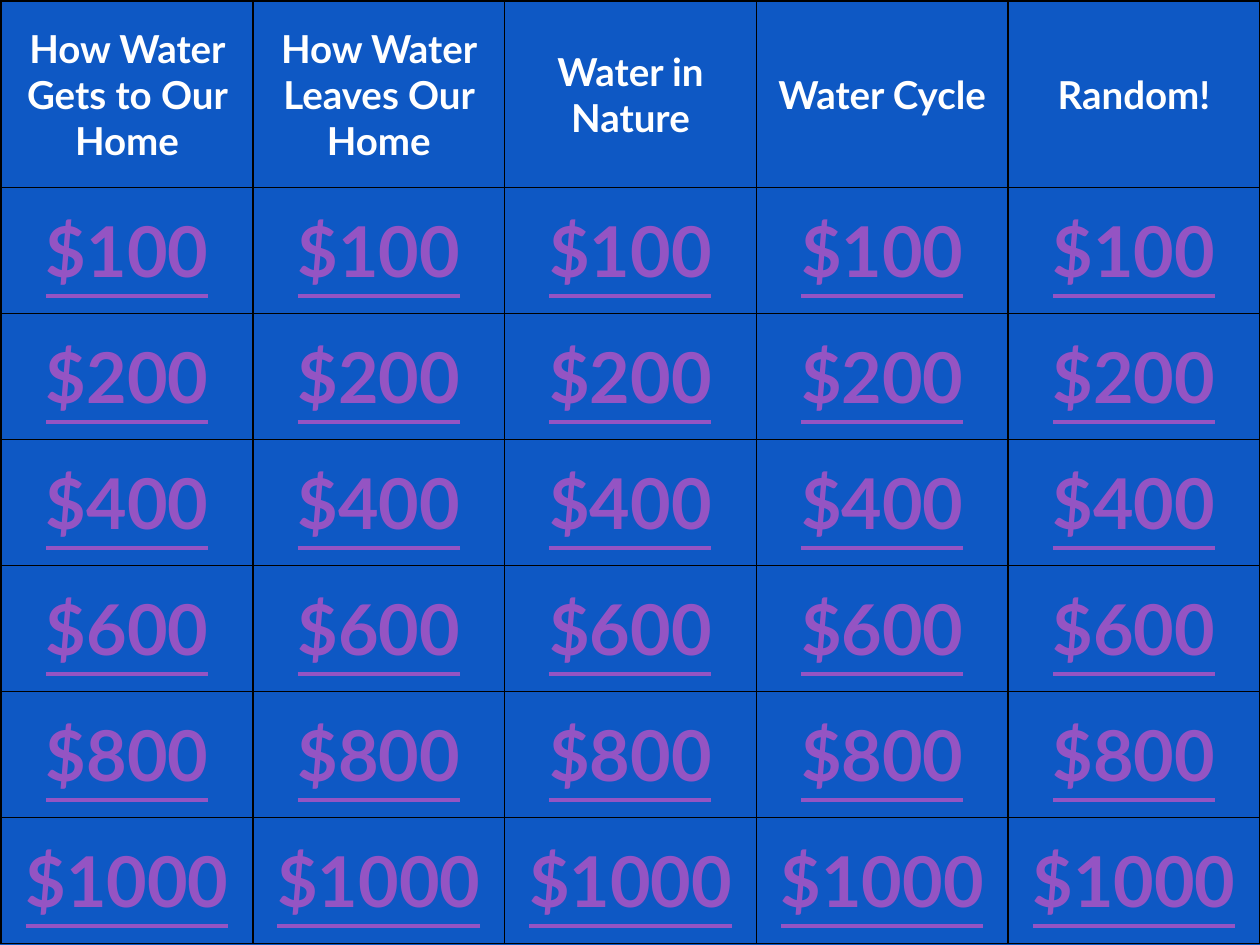
from dataclasses import dataclass

from lxml import etree
from pptx import Presentation
from pptx.dml.color import RGBColor
from pptx.enum.text import MSO_ANCHOR, PP_ALIGN
from pptx.oxml.ns import qn
from pptx.util import Inches, Pt

CENTER = PP_ALIGN.CENTER
MIDDLE = MSO_ANCHOR.MIDDLE


@dataclass(frozen=True)
class Theme:
    board: str = "0E58C4"
    category: str = "FFFFFF"
    amount: str = "9454C3"
    grid: str = "000000"
    font: str = "Lato"
    category_size: int = 22
    amount_size: int = 40
    grid_width: int = 1


theme = Theme()
categories = [
    "How Water Gets to Our Home",
    "How Water Leaves Our Home",
    "Water in Nature",
    "Water Cycle",
    "Random!",
]
amounts = [100, 200, 400, 600, 800, 1000]
rows = [categories] + [[f"${amount}"] * len(categories) for amount in amounts]


def add_borders(cell):
    tcPr = cell._tc.get_or_add_tcPr()
    for side in ("lnL", "lnR", "lnT", "lnB"):
        ln = etree.SubElement(tcPr, qn(f"a:{side}"), w=str(Pt(theme.grid_width)))
        fill = etree.SubElement(ln, qn("a:solidFill"))
        etree.SubElement(fill, qn("a:srgbClr"), val=theme.grid)


prs = Presentation()
prs.slide_width = Inches(10)
prs.slide_height = Inches(7.5)
s = prs.slides.add_slide(prs.slide_layouts[6])
s.background.fill.solid()
s.background.fill.fore_color.rgb = RGBColor.from_string(theme.board)

table = s.shapes.add_table(
    len(rows), len(categories),
    Inches(0.01), Inches(0.01), Inches(9.99), Inches(7.49),
).table
for i, row in enumerate(rows):
    is_header = i == 0
    table.rows[i].height = Inches(1.48 if is_header else 1)
    for j, text in enumerate(row):
        cell = table.cell(i, j)
        add_borders(cell)
        cell.fill.solid()
        cell.fill.fore_color.rgb = RGBColor.from_string(theme.board)
        cell.vertical_anchor = MIDDLE
        p = cell.text_frame.paragraphs[0]
        p.text = text
        p.alignment = CENTER
        p.font.name = theme.font
        p.font.bold = True
        p.font.underline = not is_header
        p.font.size = Pt(theme.category_size if is_header else theme.amount_size)
        p.font.color.rgb = RGBColor.from_string(
            theme.category if is_header else theme.amount
        )

prs.save("out.pptx")
